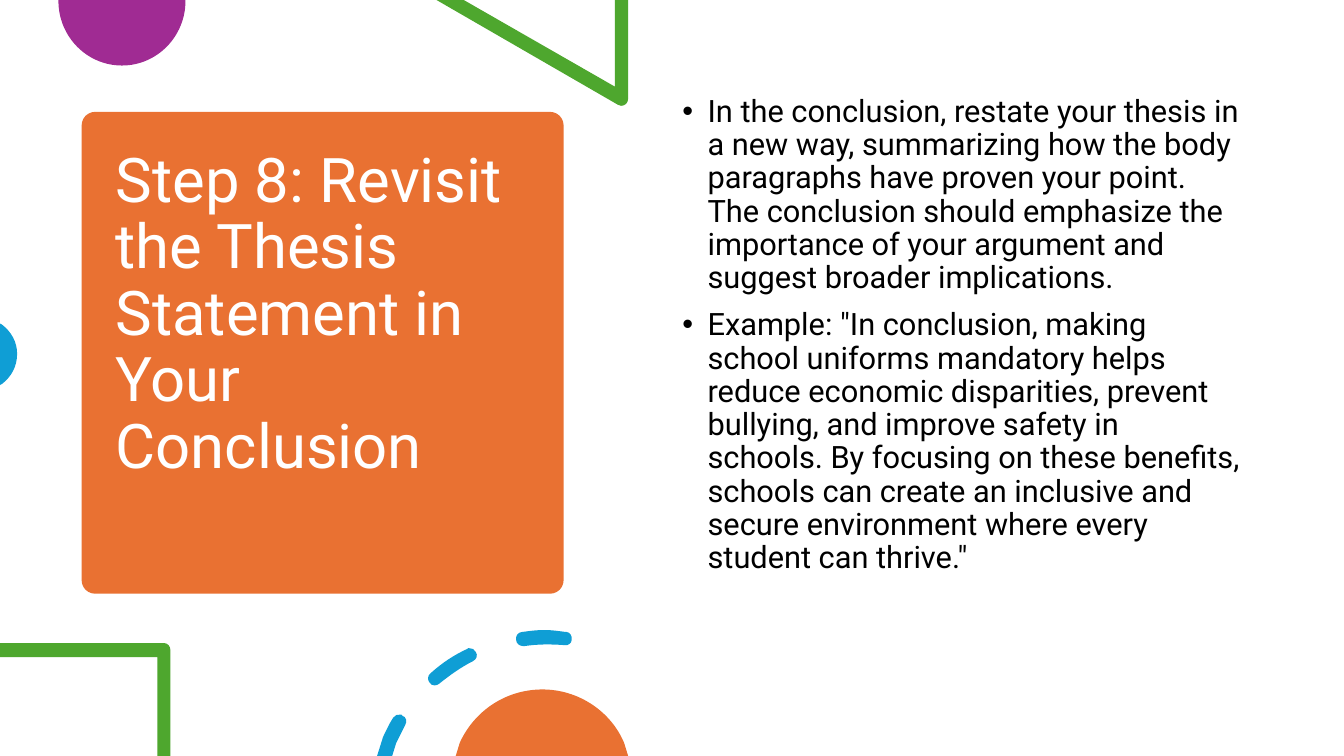
"""Build the thesis-conclusion slide with its title card and decorative shapes."""
from dataclasses import dataclass

from lxml.etree import SubElement
from pptx import Presentation
from pptx.dml.color import RGBColor
from pptx.enum.shapes import MSO_SHAPE as Preset
from pptx.enum.text import MSO_ANCHOR as Anchor
from pptx.oxml.ns import qn
from pptx.util import Inches, Pt

FONT = "Roboto"
ORANGE, PURPLE, GREEN, BLUE = "E97132", "A02B93", "4EA72E", "0F9ED5"
WHITE, BLACK = "FFFFFF", "000000"

Contour = list[tuple[float, ...]]


@dataclass(frozen=True)
class Ornament:
    """Closed contours whose steps are points (x, y) or cubic curves (six numbers)."""
    color: str
    contours: list[Contour]


@dataclass(frozen=True)
class TextBlock:
    """A text box and the look of its paragraphs."""
    frame: tuple[float, float, float, float]
    paragraphs: list[str]
    size: int
    color: str
    anchor: Anchor = Anchor.TOP
    bottom_inset: float = 0.05
    bulleted: bool = False


PURPLE_DISC = Ornament(PURPLE, [[
    (1.84, 0), (0.58, 0), (0.58, 0.01),
    (0.58, 0.36, 0.86, 0.65, 1.21, 0.65), (1.56, 0.65, 1.84, 0.36, 1.84, 0.01)]])
GREEN_TRIANGLE = Ornament(GREEN, [[
    (6.23, 0), (6.1, 0), (6.1, 0.86), (4.6, 0), (4.33, 0), (6.13, 1.04),
    (6.14, 1.05, 6.15, 1.05, 6.16, 1.05), (6.2, 1.05, 6.23, 1.02, 6.23, 0.98)]])
BLUE_DISC = Ornament(BLUE, [[
    (0, 3.21), (0, 3.82), (0.02, 3.81),
    (0.11, 3.74, 0.17, 3.64, 0.17, 3.51), (0.17, 3.39, 0.11, 3.29, 0.02, 3.22)]])
GREEN_CORNER = Ornament(GREEN, [[
    (1.63, 6.38), (0, 6.38), (0, 6.52), (1.56, 6.52), (1.56, 7.5), (1.69, 7.5),
    (1.69, 6.45), (1.69, 6.41, 1.66, 6.38, 1.63, 6.38)]])
BLUE_DASHES = Ornament(BLUE, [
    [(3.97, 7.09), (3.94, 7.08, 3.92, 7.1, 3.9, 7.12),
     (3.86, 7.18, 3.83, 7.25, 3.8, 7.31), (3.74, 7.5), (3.89, 7.5), (3.93, 7.37),
     (3.96, 7.31, 3.99, 7.25, 4.02, 7.19), (4.04, 7.16, 4.03, 7.11, 3.99, 7.1),
     (3.99, 7.09, 3.98, 7.09, 3.97, 7.09)],
    [(4.65, 6.43), (4.65, 6.43, 4.64, 6.43, 4.63, 6.44),
     (4.5, 6.5, 4.38, 6.58, 4.27, 6.68), (4.24, 6.7, 4.24, 6.75, 4.26, 6.77),
     (4.27, 6.79, 4.29, 6.8, 4.31, 6.8), (4.31, 6.8),
     (4.33, 6.8, 4.35, 6.79, 4.36, 6.78),
     (4.46, 6.7, 4.57, 6.62, 4.69, 6.56), (4.73, 6.54, 4.74, 6.5, 4.72, 6.47),
     (4.71, 6.44, 4.68, 6.43, 4.65, 6.43)],
    [(5.4, 6.25), (5.32, 6.25, 5.25, 6.26, 5.18, 6.27),
     (5.14, 6.27, 5.11, 6.31, 5.12, 6.35), (5.12, 6.38, 5.15, 6.41, 5.19, 6.41),
     (5.19, 6.41, 5.19, 6.41, 5.2, 6.41), (5.33, 6.39, 5.46, 6.39, 5.6, 6.4),
     (5.63, 6.41, 5.67, 6.38, 5.67, 6.35), (5.68, 6.31, 5.65, 6.27, 5.62, 6.27),
     (5.62, 6.27, 5.61, 6.27, 5.61, 6.27), (5.54, 6.26, 5.47, 6.25, 5.4, 6.25)]])
ORANGE_DISC = Ornament(ORANGE, [[
    (5.38, 6.84), (5.01, 6.84, 4.7, 7.06, 4.56, 7.37), (4.52, 7.5), (6.23, 7.5),
    (6.19, 7.37), (6.06, 7.06, 5.74, 6.84, 5.38, 6.84)]])

TITLE = TextBlock(
    (1.05, 1.22, 4.31, 4.56),
    ["Step 8: Revisit the Thesis Statement in Your Conclusion"],
    44, WHITE, Anchor.MIDDLE, bottom_inset=0.79)
BODY = TextBlock(
    (6.67, 0.9, 5.74, 5.35),
    ["In the conclusion, restate your thesis in a new way, summarizing how the body "
     "paragraphs have proven your point. The conclusion should emphasize the "
     "importance of your argument and suggest broader implications.",
     'Example: "In conclusion, making school uniforms mandatory helps reduce economic '
     "disparities, prevent bullying, and improve safety in schools. By focusing on "
     "these benefits, schools can create an inclusive and secure environment where "
     'every student can thrive."'],
    22, BLACK, bulleted=True)


def paint(target, color: str) -> None:
    """Give a fill or a font colour format a solid colour."""
    target.rgb = RGBColor.from_string(color)


def finish(shape, color: str) -> None:
    """Fill a shape and remove its outline and shadow."""
    shape.fill.solid()
    paint(shape.fill.fore_color, color)
    shape.line.fill.background()
    shape.shadow.inherit = False


def bend(shape, contours: list[Contour]) -> None:
    """Turn the straight segments that stand for curves into cubic curves."""
    steps = [step for contour in contours for step in contour[1:]]
    for segment, step in zip(list(shape._element.iter(qn("a:lnTo"))), steps):
        if len(step) == 2:
            continue
        segment.tag = qn("a:cubicBezTo")
        segment.remove(segment[0])
        for x, y in zip(step[::2], step[1::2]):
            SubElement(segment, qn("a:pt"), x=str(Inches(x) - shape.left),
                       y=str(Inches(y) - shape.top))


def draw_ornament(page, ornament: Ornament) -> None:
    """Draw all contours of an ornament as one freeform."""
    outlines = [[tuple(map(Inches, step[-2:])) for step in contour]
                for contour in ornament.contours]
    builder = page.shapes.build_freeform(*outlines[0][0])
    for number, outline in enumerate(outlines):
        if number:
            builder.move_to(*outline[0])
        builder.add_line_segments(outline[1:], close=True)
    shape = builder.convert_to_shape()
    bend(shape, ornament.contours)
    finish(shape, ornament.color)


def draw_card(page) -> None:
    """Draw the rounded card behind the title."""
    card = page.shapes.add_shape(
        Preset.ROUNDED_RECTANGLE, *map(Inches, (0.81, 1.11, 4.78, 4.78)))
    card.adjustments[0] = 0.028
    finish(card, ORANGE)


def add_bullet(para) -> None:
    """Give a paragraph a hanging round bullet."""
    properties = para._p.get_or_add_pPr()
    properties.set("marL", str(Inches(0.25)))
    properties.set("indent", str(Inches(-0.25)))
    SubElement(properties, qn("a:buFont"), typeface="Arial")
    SubElement(properties, qn("a:buChar"), char="•")


def draw_text(page, block: TextBlock) -> None:
    """Draw a text block run by run."""
    box = page.shapes.add_textbox(*map(Inches, block.frame))
    frame = box.text_frame
    frame.word_wrap = True
    frame.vertical_anchor = block.anchor
    frame.margin_bottom = Inches(block.bottom_inset)
    for number, text in enumerate(block.paragraphs):
        para = frame.add_paragraph() if number else frame.paragraphs[0]
        para.line_spacing = 0.9
        if block.bulleted:
            para.space_before = Pt(10)
            add_bullet(para)
        span = para.add_run()
        span.text = text
        span.font.name = FONT
        span.font.size = Pt(block.size)
        paint(span.font.color, block.color)


def main() -> None:
    """Build and save the deck."""
    deck = Presentation()
    deck.slide_width, deck.slide_height = Inches(13.33), Inches(7.5)
    page = deck.slides.add_slide(deck.slide_layouts[6])
    draw_card(page)
    draw_text(page, TITLE)
    for ornament in (PURPLE_DISC, GREEN_TRIANGLE, BLUE_DISC):
        draw_ornament(page, ornament)
    draw_text(page, BODY)
    for ornament in (GREEN_CORNER, BLUE_DASHES, ORANGE_DISC):
        draw_ornament(page, ornament)
    deck.save("out.pptx")


if __name__ == "__main__":
    main()
